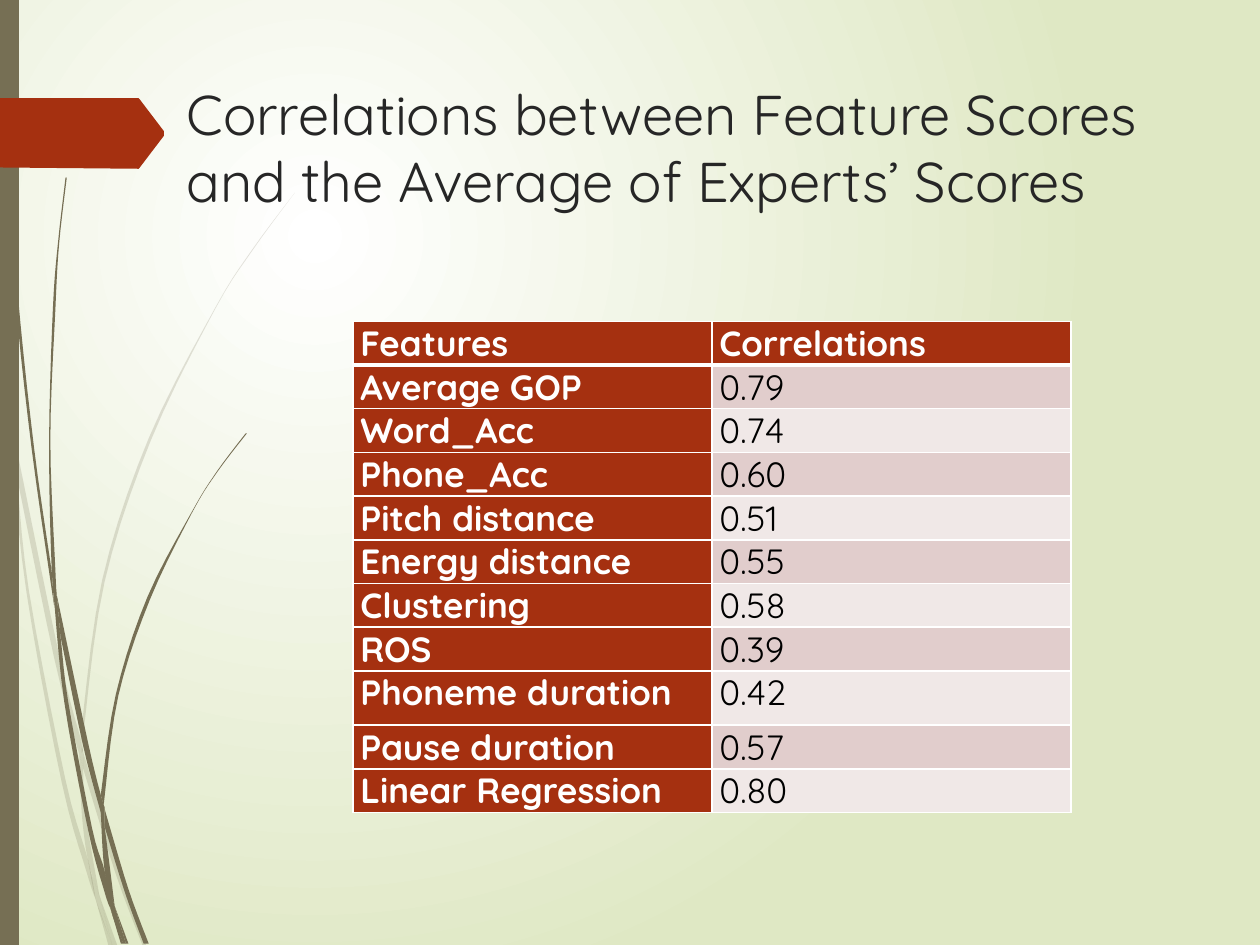
import pptx
import pptx.dml.color
import pptx.enum.shapes
import pptx.enum.text
import pptx.oxml
import pptx.oxml.ns
import pptx.util

COLOURS = {
    "white": "FFFFFF", "black": "000000", "title": "262626",
    "meadow": "DFE8C4", "stem": "766F54", "rust": "A53010",
    "band_dark": "E1CDCC", "band_light": "F0E8E7",
}
FONT = "Quicksand"
NS = pptx.oxml.ns.nsdecls("a")

prs = pptx.Presentation()
prs.slide_width = pptx.util.Inches(10)
prs.slide_height = pptx.util.Inches(7.5)
U = prs.slide_width // 1000  # the slide is a grid of 1000 columns by 750 rows


def draw_outline(shapes, edges, colour, alpha=100):
    """Fill the closed outline made of edges, each a smooth curve through its points."""
    points = []
    for edge in edges:
        padded = [edge[0], *edge, edge[-1]]
        points.append(edge[0])
        for a, b, c, d in zip(padded, padded[1:], padded[2:], padded[3:]):
            for t in (0.2, 0.4, 0.6, 0.8, 1):
                points.append(tuple(
                    b[i] + t / 2 * (c[i] - a[i]
                                    + t * (2 * a[i] - 5 * b[i] + 4 * c[i] - d[i])
                                    + t * t * (3 * b[i] - a[i] - 3 * c[i] + d[i]))
                    for i in (0, 1)))
    points = [(round(x * U), round(y * U)) for x, y in points]
    builder = shapes.build_freeform(*points[0])
    builder.add_line_segments(points[1:], close=True)
    sp = builder.convert_to_shape()
    sp.shadow.inherit = False
    sp.line.fill.background()
    sp.fill.solid()
    sp.fill.fore_color.rgb = pptx.dml.color.RGBColor.from_string(COLOURS[colour])
    if alpha < 100:
        clr = sp.fill._xPr.find(".//" + pptx.oxml.ns.qn("a:srgbClr"))
        clr.append(pptx.oxml.parse_xml(f'<a:alpha {NS} val="{alpha * 1000}"/>'))


def write(p, text, size, colour, bold=False):
    r = p.add_run()
    r.text = text
    r.font.name = FONT
    r.font.size = pptx.util.Pt(size)
    r.font.bold = bold
    r.font.color.rgb = pptx.dml.color.RGBColor.from_string(COLOURS[colour])


s = prs.slides.add_slide(prs.slide_layouts[6])

# Background: light from the upper left
fill = s.background.fill
fill.gradient()
for stop, colour in zip(fill.gradient_stops, ("white", "meadow")):
    stop.color.rgb = pptx.dml.color.RGBColor.from_string(COLOURS[colour])
lin = s._element.find(".//" + pptx.oxml.ns.qn("a:lin"))
lin.getparent().replace(lin, pptx.oxml.parse_xml(
    f'<a:path {NS} path="circle">'
    '<a:fillToRect l="50000" t="50000" r="100000" b="100000"/></a:path>'))

# Grass: every blade is a list of edges in grid units
faint_blades = [
    [[(8, 350), (6, 322), (0, 282)], [(0, 299), (8, 344)]],
    [[(13, 376), (43, 522), (63, 599)], [(64, 586), (47, 520), (11, 345)]],
    [[(66, 596), (69, 607), (95, 692), (116, 750)], [(113, 750), (92, 694), (66, 610)]],
    [[(79, 711), (89, 750)], [(93, 750), (79, 711)]],
    [[(8, 350), (13, 376), (23, 469), (52, 619), (70, 683), (76, 714)],
     [(76, 714), (69, 693), (49, 621), (21, 470), (8, 350)]],
    [[(63, 599), (65, 646), (70, 683), (79, 711)], [(79, 711), (68, 646), (66, 608)]],
    [[(66, 596), (66, 584), (83, 462), (120, 349), (171, 245), (201, 198), (234, 153)],
     [(234, 153), (201, 197), (171, 244), (118, 348), (81, 461), (64, 584)]],
    [[(76, 714), (86, 750)], [(89, 750), (76, 714)]],
    [[(66, 608), (66, 596)], [(64, 586), (63, 599)]],
    [[(70, 683), (76, 714), (89, 750)], [(79, 711), (72, 692)]],
]
bold_blades = [
    [[(2, 0), (3, 48), (5, 110), (12, 233), (25, 355), (43, 481)],
     [(41, 453), (27, 355), (14, 232), (6, 109), (3, 0)]],
    [[(48, 505), (66, 592), (80, 645)], [(80, 631), (70, 590), (45, 472)]],
    [[(83, 641), (85, 649), (102, 706), (118, 749)], [(114, 749), (99, 708), (83, 656)]],
    [[(43, 477), (48, 505), (54, 556), (73, 657), (83, 691), (88, 722)],
     [(88, 722), (83, 708), (70, 659), (51, 557), (43, 477)]],
    [[(45, 472), (44, 453), (40, 349), (44, 245), (47, 193), (53, 141)],
     [(52, 141), (46, 193), (42, 245), (39, 349), (41, 449), (45, 472)]],
    [[(91, 719), (100, 749)], [(102, 749), (91, 719)]],
    [[(41, 449), (43, 477), (48, 505)], [(48, 505), (45, 472), (41, 449)]],
    [[(83, 641), (83, 633), (94, 552), (119, 476), (153, 406), (173, 374), (196, 344)],
     [(195, 344), (173, 373), (153, 405), (117, 474), (92, 551), (80, 631)]],
    [[(88, 722), (96, 749)], [(98, 749), (88, 722)]],
    [[(80, 645), (83, 691), (91, 719)], [(91, 719), (83, 656), (80, 645)]],
    [[(80, 631), (80, 645)], [(83, 656), (83, 641)]],
    [[(83, 691), (88, 722), (98, 749)], [(100, 749), (91, 719), (83, 691)]],
]
for blades, alpha in ((faint_blades, 20), (bold_blades, 100)):
    group = s.shapes.add_group_shape()
    for edges in blades:
        draw_outline(group.shapes, edges, "stem", alpha)

# Side bar and arrow tab
bar = s.shapes.add_shape(pptx.enum.shapes.MSO_SHAPE.RECTANGLE,
                         0, 0, 15 * U, prs.slide_height)
bar.shadow.inherit = False
bar.line.fill.background()
bar.fill.solid()
bar.fill.fore_color.rgb = pptx.dml.color.RGBColor.from_string(COLOURS["stem"])
tab_corners = [(0, 78), (110, 78), (111, 79), (130, 104),
               (130, 108), (111, 133), (110, 134), (0, 133)]
draw_outline(s.shapes, [[corner] for corner in tab_corners], "rust")

# Title
tf = s.shapes.add_textbox(141 * U, 59 * U, 822 * U, 140 * U).text_frame
tf.word_wrap = True
tf.margin_left = tf.margin_right = 7 * U
tf.margin_top = tf.margin_bottom = 4 * U
tf.vertical_anchor = pptx.enum.text.MSO_ANCHOR.TOP
p = tf.paragraphs[0]
write(p, "Correlations between Feature Scores and the Average of Experts’ Scores",
      32, "title")

# Table of correlations
rows = [
    ("Features", "Correlations"),
    ("Average GOP", "0.79"),
    ("Word_Acc", "0.74"),
    ("Phone_Acc", "0.60"),
    ("Pitch distance", "0.51"),
    ("Energy distance", "0.55"),
    ("Clustering", "0.58"),
    ("ROS", "0.39"),
    ("Phoneme duration", "0.42"),
    ("Pause duration", "0.57"),
    ("Linear Regression", "0.80"),
]
text_size = 20
row_height = pptx.util.Pt(text_size * 1.25)
table = s.shapes.add_table(len(rows), 2, 280 * U, 255 * U,
                           570 * U, row_height * len(rows)).table
for i, row in enumerate(rows):
    table.rows[i].height = 43 * U if row[0] == "Phoneme duration" else row_height
    for j, text in enumerate(row):
        cell = table.cell(i, j)
        cell.margin_left = cell.margin_right = 6 * U
        cell.margin_top = cell.margin_bottom = 0
        heading = i == 0 or j == 0
        band = "band_dark" if i % 2 else "band_light"
        widths = {"L": 1, "R": 1, "T": 3 if i == 1 else 1, "B": 3 if i == 0 else 1}
        for side, width in widths.items():
            cell._tc.get_or_add_tcPr().append(pptx.oxml.parse_xml(
                f'<a:ln{side} {NS} w="{pptx.util.Pt(width)}"><a:solidFill>'
                f'<a:srgbClr val="{COLOURS["white"]}"/></a:solidFill></a:ln{side}>'))
        cell.fill.solid()
        cell.fill.fore_color.rgb = pptx.dml.color.RGBColor.from_string(
            COLOURS["rust" if heading else band])
        p = cell.text_frame.paragraphs[0]
        p.alignment = pptx.enum.text.PP_ALIGN.JUSTIFY
        write(p, text, text_size, "white" if heading else "black", heading)

prs.save("out.pptx")
